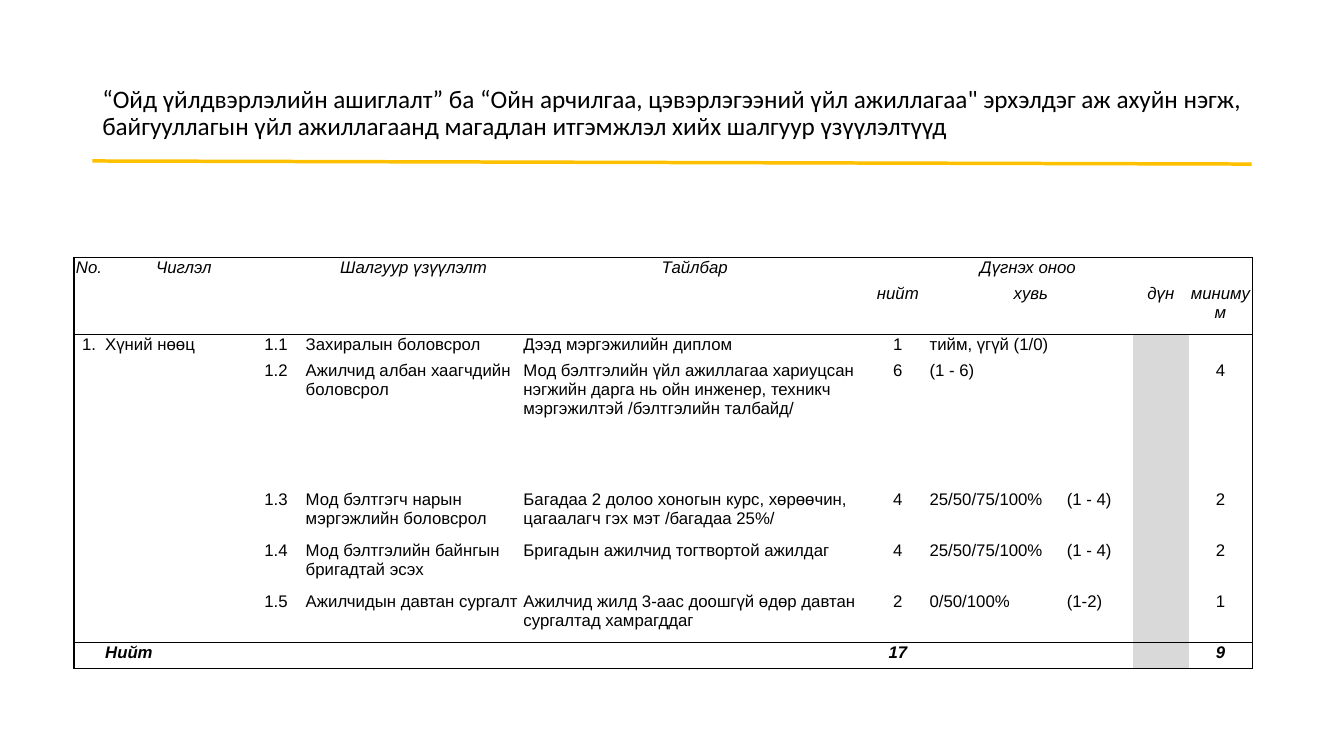
from lxml import etree
from pptx import Presentation
from pptx.dml.color import RGBColor
from pptx.enum.shapes import MSO_CONNECTOR
from pptx.enum.text import MSO_ANCHOR, PP_ALIGN
from pptx.oxml.ns import qn
from pptx.util import Pt

STRAIGHT = MSO_CONNECTOR.STRAIGHT
MIDDLE = MSO_ANCHOR.MIDDLE
CENTER, LEFT = PP_ALIGN.CENTER, PP_ALIGN.LEFT

BLACK, GOLD, GRAY = "000000", "FFC000", "D9D9D9"
TITLE = (
    "“Ойд үйлдвэрлэлийн ашиглалт” ба “Ойн арчилгаа, цэвэрлэгээний үйл "
    "ажиллагаа\" эрхэлдэг аж ахуйн нэгж, байгууллагын үйл ажиллагаанд "
    "магадлан итгэмжлэл хийх шалгуур үзүүлэлтүүд"
)
COLUMN_WIDTHS = [21.6, 113.76, 29.52, 155.52, 246.24, 43.92, 146.16, 39.6, 45.36]
ROW_HEIGHTS = [18.5, 36.5, 18.5, 92, 36.5, 36.5, 36.5, 18.5]
CRITERIA = [
    ["No.", "Чиглэл", "", "Шалгуур үзүүлэлт", "Тайлбар", "Дүгнэх оноо", "", "", ""],
    ["", "", "", "", "", "нийт", "хувь", "дүн", "минимум"],
    ["1.", "Хүний нөөц", "1.1", "Захиралын боловсрол",
     "Дээд мэргэжилийн диплом", "1", "тийм, үгүй (1/0)", "", ""],
    ["", "", "1.2", "Ажилчид албан хаагчдийн боловсрол",
     "Мод бэлтгэлийн үйл ажиллагаа хариуцсан нэгжийн дарга нь ойн инженер, "
     "техникч мэргэжилтэй /бэлтгэлийн талбайд/", "6", "(1 - 6)", "", "4"],
    ["", "", "1.3", "Мод бэлтгэгч нарын мэргэжлийн боловсрол",
     "Багадаа 2 долоо хоногын курс, хөрөөчин, цагаалагч гэх мэт /багадаа 25%/",
     "4", "25/50/75/100%\t(1 - 4)", "", "2"],
    ["", "", "1.4", "Мод бэлтгэлийн байнгын бригадтай эсэх",
     "Бригадын ажилчид тогтвортой ажилдаг", "4", "25/50/75/100%\t(1 - 4)", "", "2"],
    ["", "", "1.5", "Ажилчидын давтан сургалт",
     "Ажилчид жилд 3-аас доошгүй өдөр давтан сургалтад хамрагддаг",
     "2", "0/50/100%\t(1-2)", "", "1"],
    ["", "Нийт", "", "", "", "17", "", "", "9"],
]
HEADER_ROWS = 2
TOTAL_ROW = len(CRITERIA) - 1
LAST_COLUMN = len(COLUMN_WIDTHS) - 1
CENTERED_COLUMNS = {0, 5, 8}
SCORE_COLUMN, RANGE_COLUMN, SUM_COLUMN = 5, 6, 7
RANGE_TAB = 98


def color(hex_value):
    return RGBColor.from_string(hex_value)


def add_run(paragraph, text, font_name, size, bold=False, italic=False):
    run = paragraph.add_run()
    run.text = text
    run.font.name = font_name
    run.font.size = Pt(size)
    run.font.bold = bold
    run.font.italic = italic
    run.font.color.rgb = color(BLACK)


def add_title(slide):
    title = slide.shapes.add_textbox(Pt(66), Pt(29), Pt(828), Pt(104.5))
    title.text_frame.word_wrap = True
    title.text_frame.vertical_anchor = MIDDLE
    paragraph = title.text_frame.paragraphs[0]
    paragraph.line_spacing = 0.9
    add_run(paragraph, TITLE, "Calibri", 18)


def add_rule(slide):
    rule = slide.shapes.add_connector(STRAIGHT, Pt(66), Pt(115), Pt(894), Pt(117.2))
    rule.line.color.rgb = color(GOLD)
    rule.line.width = Pt(2.5)
    etree.SubElement(rule._element.spPr, qn("a:effectLst"))


def set_borders(cell, widths):
    properties = cell._tc.get_or_add_tcPr()
    for position, (side, width) in enumerate(widths.items()):
        border = etree.Element(qn(f"a:ln{side}"), w=str(Pt(width)))
        if width:
            fill = etree.SubElement(border, qn("a:solidFill"))
            etree.SubElement(fill, qn("a:srgbClr"), val=BLACK)
        else:
            etree.SubElement(border, qn("a:noFill"))
        properties.insert(position, border)


def border_widths(row, column):
    top = 1 if row == 0 else 0.5 if row in (HEADER_ROWS, TOTAL_ROW) else 0
    bottom = 0.5 if row in (HEADER_ROWS - 1, TOTAL_ROW - 1, TOTAL_ROW) else 0
    return {
        "L": 1 if column == 0 else 0,
        "R": 1 if column == LAST_COLUMN else 0,
        "T": top,
        "B": bottom,
    }


def add_tab_stop(paragraph, position):
    stops = etree.SubElement(paragraph._p.get_or_add_pPr(), qn("a:tabLst"))
    etree.SubElement(stops, qn("a:tab"), pos=str(Pt(position)), algn="l")


def fill_cell(cell, row, column):
    cell.margin_left = cell.margin_right = cell.margin_top = Pt(0.72)
    cell.margin_bottom = Pt(0)
    if column == SUM_COLUMN and row >= HEADER_ROWS:
        cell.fill.solid()
        cell.fill.fore_color.rgb = color(GRAY)
    else:
        cell.fill.background()
    set_borders(cell, border_widths(row, column))

    text = CRITERIA[row][column]
    paragraph = cell.text_frame.paragraphs[0]
    header = row < HEADER_ROWS
    paragraph.alignment = CENTER if header or column in CENTERED_COLUMNS else LEFT
    if "\t" in text:
        add_tab_stop(paragraph, RANGE_TAB)
    if text:
        total = row == TOTAL_ROW
        add_run(paragraph, text, "Arial", 12, bold=total, italic=header or total)
    else:
        etree.SubElement(paragraph._p, qn("a:endParaRPr"), sz="1200")


def add_criteria_table(slide):
    table = slide.shapes.add_table(
        len(ROW_HEIGHTS), len(COLUMN_WIDTHS), Pt(52.8), Pt(183.8),
        Pt(sum(COLUMN_WIDTHS)), Pt(sum(ROW_HEIGHTS)),
    ).table
    table.first_row = False
    table.horz_banding = False
    for column, width in zip(table.columns, COLUMN_WIDTHS):
        column.width = Pt(width)
    for row, height in zip(table.rows, ROW_HEIGHTS):
        row.height = Pt(height)
    for row in range(len(ROW_HEIGHTS)):
        for column in range(len(COLUMN_WIDTHS)):
            fill_cell(table.cell(row, column), row, column)
    table.cell(0, SCORE_COLUMN).merge(table.cell(0, SUM_COLUMN))


def main():
    presentation = Presentation()
    presentation.slide_width = Pt(960)
    presentation.slide_height = Pt(540)
    slide = presentation.slides.add_slide(presentation.slide_layouts[6])
    add_title(slide)
    add_criteria_table(slide)
    add_rule(slide)
    presentation.save("out.pptx")


if __name__ == "__main__":
    main()
